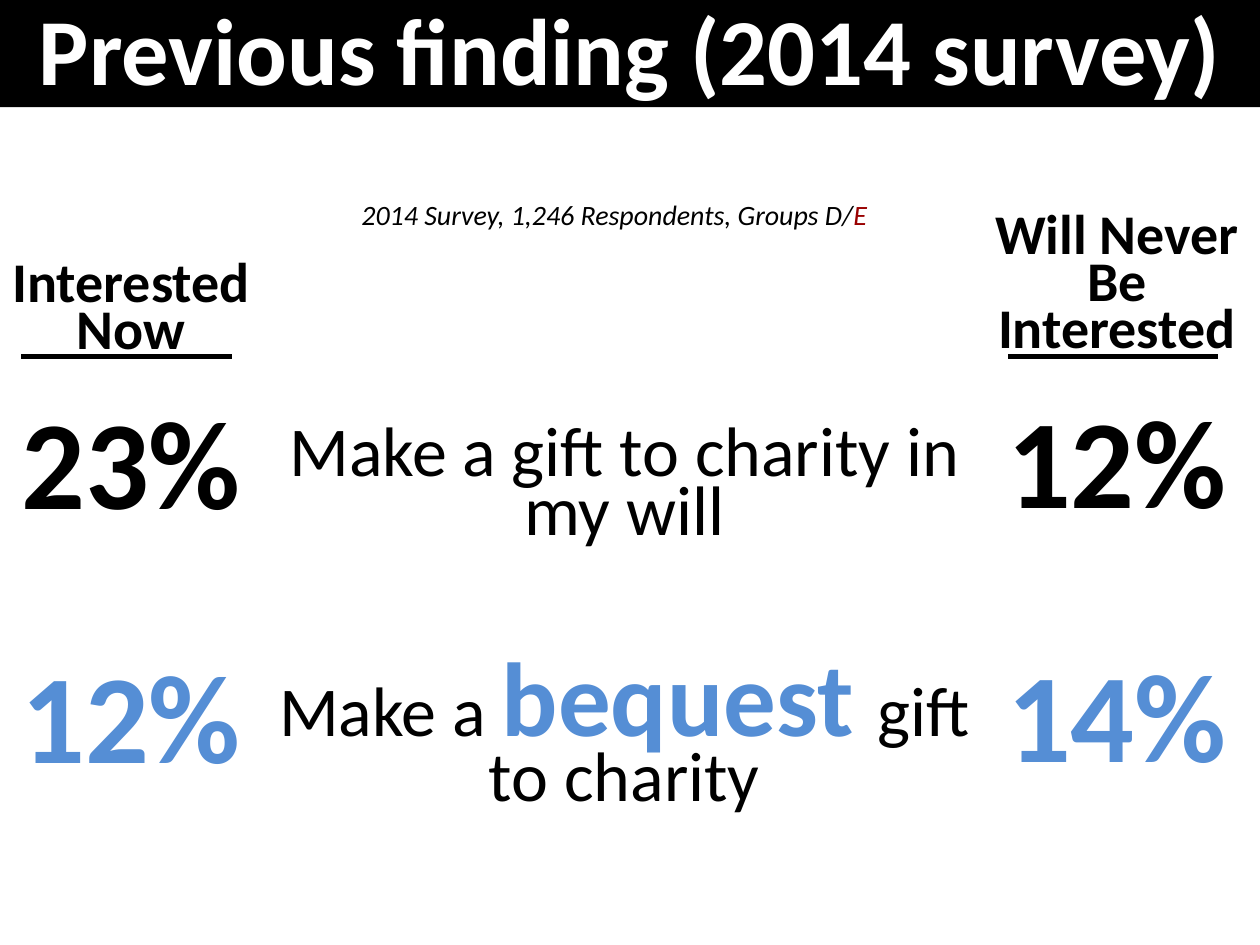
from dataclasses import dataclass

from pptx import Presentation
from pptx.dml.color import RGBColor
from pptx.enum.shapes import MSO_CONNECTOR
from pptx.enum.text import MSO_ANCHOR, PP_ALIGN
from pptx.oxml.ns import qn
from pptx.util import Inches, Pt
from lxml import etree


@dataclass(frozen=True)
class Theme:
    font: str = "Calibri"
    black: RGBColor = RGBColor(0, 0, 0)
    white: RGBColor = RGBColor(255, 255, 255)
    blue: RGBColor = RGBColor(0x55, 0x8E, 0xD5)
    red: RGBColor = RGBColor(0x99, 0, 0)
    title: int = 54
    heading: int = 32
    percent: int = 72
    wording: int = 40
    emphasis: int = 60
    note: int = 16


class SlideBuilder:
    def __init__(self, slide, theme):
        self.slide = slide
        self.theme = theme

    def style(self, font, size, color=None, bold=False, italic=False):
        font.name = self.theme.font
        font.size = Pt(size)
        font.bold = bold
        font.italic = italic
        font.color.rgb = color or self.theme.black

    def frame(self, shape, insets):
        """Prepare a wrapping, top-anchored frame; insets run left, top, right, bottom."""
        frame = shape.text_frame
        frame.word_wrap = True
        frame.vertical_anchor = MSO_ANCHOR.TOP
        (frame.margin_left, frame.margin_top,
         frame.margin_right, frame.margin_bottom) = map(Inches, insets)
        return frame

    def box(self, left, top, width, height, insets):
        shape = self.slide.shapes.add_textbox(*map(Inches, (left, top, width, height)))
        return self.frame(shape, insets)

    def paragraph(self, frame, text, size, spacing, before=0, **look):
        first = frame.paragraphs[0]
        paragraph = frame.add_paragraph() if first.runs else first
        paragraph.alignment = PP_ALIGN.CENTER
        paragraph.line_spacing = spacing
        paragraph.space_before = Pt(before)
        paragraph.add_run().text = text
        self.style(paragraph.font, size, **look)
        return paragraph

    def add_run(self, paragraph, text, size, **look):
        run = paragraph.add_run()
        run.text = text
        self.style(run.font, size, **look)

    def title(self, text):
        title = self.slide.shapes.title
        title.left, title.top, title.width, title.height = map(Inches, (0, 0, 10, 0.85))
        title.fill.solid()
        title.fill.fore_color.rgb = self.theme.black
        frame = self.frame(title, (0.1, 0.1, 0.1, 0))
        self.paragraph(frame, text, self.theme.title, 0.8,
                       color=self.theme.white, bold=True)

    def percent_column(self, place, insets, heading, will, bequest):
        frame = self.box(*place, insets)
        theme = self.theme
        self.paragraph(frame, heading, theme.heading, 0.7, bold=True)
        self.paragraph(frame, will, theme.percent, 0.8, before=31, bold=True)
        self.paragraph(frame, bequest, theme.percent, 0.8, before=76,
                       color=theme.blue, bold=True)

    def rule(self, left, top, width):
        line = self.slide.shapes.add_connector(
            MSO_CONNECTOR.STRAIGHT, Inches(left), Inches(top),
            Inches(left + width), Inches(top))
        line.line.color.rgb = self.theme.black
        line.line.width = Pt(3)
        etree.SubElement(line._element.spPr, qn("a:effectLst"))

    def survey_note(self, text, last_group):
        frame = self.box(2.25, 1.55, 5.25, 0.45, (0.1, 0.1, 0.1, 0.1))
        note = self.paragraph(frame, text, self.theme.note, 0.7, italic=True)
        self.add_run(note, last_group, self.theme.note,
                     color=self.theme.red, italic=True)

    def wordings(self, will, before, emphasis, after):
        theme = self.theme
        frame = self.box(2.08, 2.41, 5.75, 5.21, (0.1, 1, 0.1, 0.05))
        self.paragraph(frame, will, theme.wording, 0.7)
        bequest = self.paragraph(frame, before, theme.wording, 0.7, before=68)
        self.add_run(bequest, emphasis, theme.emphasis, color=theme.blue, bold=True)
        self.add_run(bequest, after, theme.wording)


def main():
    deck = Presentation()
    deck.slide_width, deck.slide_height = Inches(10), Inches(7.5)
    title_only = deck.slide_layouts[5]
    builder = SlideBuilder(deck.slides.add_slide(title_only), Theme())

    builder.title("Previous finding (2014 survey)")
    builder.percent_column((0, 2.05, 2.08, 5.62), (0, 0.05, 0, 0.05),
                           "Interested Now", "23%", "12%")
    builder.percent_column((7.75, 1.67, 2.23, 5.93), (0.1, 0.05, 0.1, 0.05),
                           "Will Never Be Interested", "12%", "14%")
    builder.survey_note("2014 Survey, 1,246 Respondents, Groups D/", "E")
    for left in (0.17, 8):
        builder.rule(left, 2.83, 1.67)
    builder.wordings("Make a gift to charity in my will",
                     "Make a ", "bequest ", "gift to charity")
    deck.save("out.pptx")


if __name__ == "__main__":
    main()
